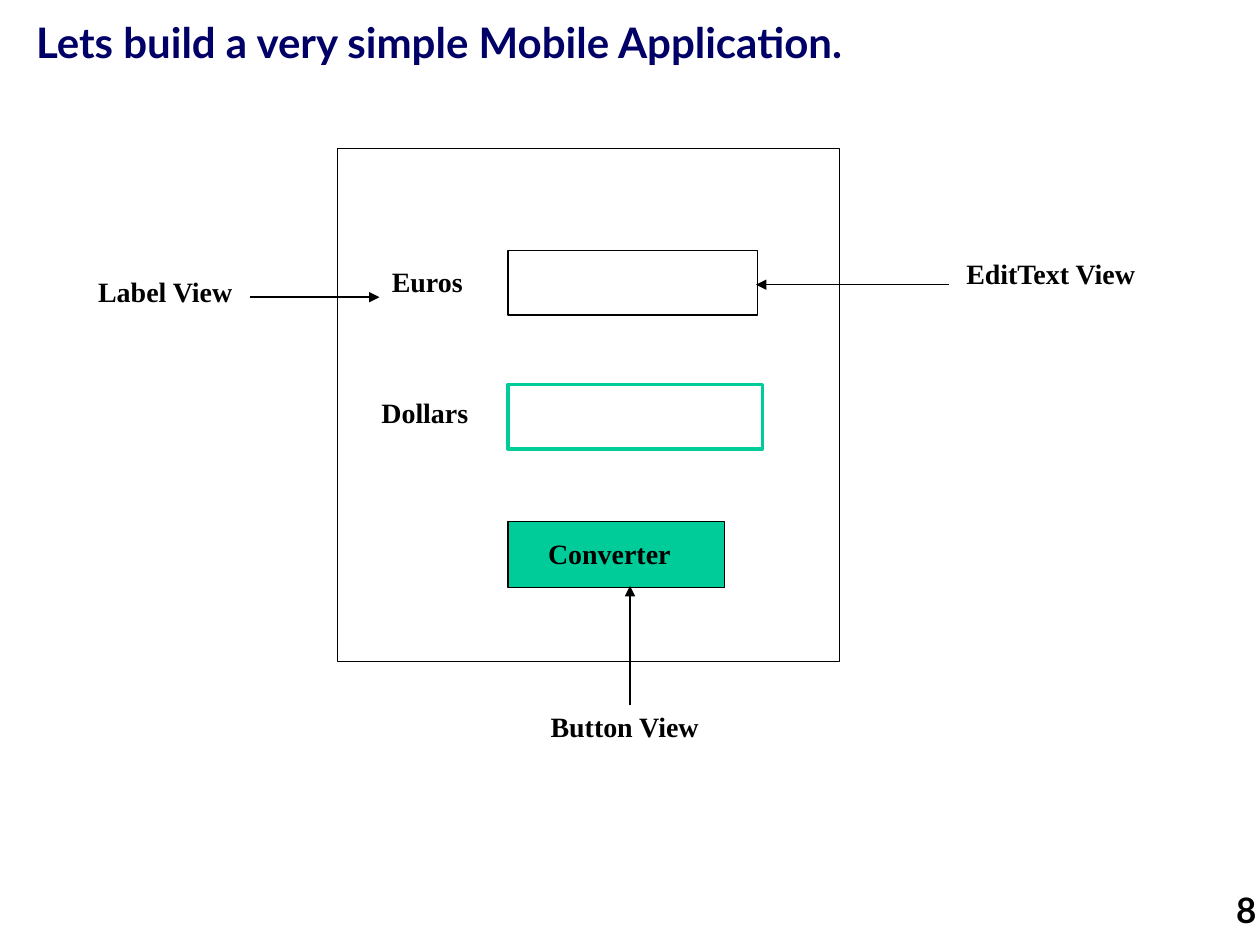
import pptx
import pptx.util
import pptx.dml.color
import pptx.enum.shapes
import pptx.enum.text
import pptx.oxml
import pptx.oxml.ns

Cm = pptx.util.Cm
Pt = pptx.util.Pt
RGBColor = pptx.dml.color.RGBColor
ALIGN = pptx.enum.text.PP_ALIGN

BLACK = RGBColor(0x00, 0x00, 0x00)
WHITE = RGBColor(0xFF, 0xFF, 0xFF)
NAVY = RGBColor(0x00, 0x00, 0x66)
GREEN = RGBColor(0x00, 0xCC, 0x99)

deck = pptx.Presentation()
deck.slide_width = Cm(25.4)
deck.slide_height = Cm(19.05)
page = deck.slides.add_slide(deck.slide_layouts[6])


def add_text(text, left, top, width, height, font="Times New Roman", size=16,
             color=BLACK, align=ALIGN.LEFT, wrap=False):
    box = page.shapes.add_textbox(Cm(left), Cm(top), Cm(width), Cm(height))
    box.text_frame.word_wrap = wrap
    para = box.text_frame.paragraphs[0]
    para.alignment = align
    span = para.add_run()
    span.text = text
    span.font.name = font
    span.font.size = Pt(size)
    span.font.bold = True
    span.font.color.rgb = color


add_text("8", 17.53, 17.78, 8.05, 1.27, font="Lato", size=20,
         align=ALIGN.RIGHT, wrap=True)
add_text("Lets build a very simple Mobile Application.", 0.48, 0.2, 24.66, 2.54,
         font="Lato", size=24, color=NAVY, wrap=True)

field_left = 10.24
rectangles = [
    (6.8, 3, 10.12, 10.33, None, BLACK, 0.75),
    (field_left, 5.05, 5.03, 1.3, None, BLACK, 0.75),
    (field_left, 7.75, 5.13, 1.3, WHITE, GREEN, 2),
    (field_left, 10.52, 4.37, 1.32, GREEN, BLACK, 0.75),
]
for left, top, width, height, fill, line, weight in rectangles:
    box = page.shapes.add_shape(pptx.enum.shapes.MSO_SHAPE.RECTANGLE,
                                Cm(left), Cm(top), Cm(width), Cm(height))
    box.shadow.inherit = False
    if fill is None:
        box.fill.background()
    else:
        box.fill.solid()
        box.fill.fore_color.rgb = fill
    box.line.color.rgb = line
    box.line.width = Pt(weight)

labels = [
    ("Euros", 7.65, 5.21, 1.96),
    ("Dollars", 7.44, 7.85, 2.29),
    ("Converter", 10.8, 10.69, 3),
    ("EditText View", 19.23, 5.05, 3.96),
    ("Label View", 1.73, 5.41, 3.25),
    ("Button View", 10.85, 14.17, 3.53),
]
for text, left, top, width in labels:
    add_text(text, left, top, width, 0.94)

arrows = [
    (5.03, 5.99, 7.65, 5.99),
    (19.13, 5.74, 15.24, 5.74),
    (12.7, 14.22, 12.7, 11.81),
]
for start_x, start_y, end_x, end_y in arrows:
    arrow = page.shapes.add_connector(pptx.enum.shapes.MSO_CONNECTOR.STRAIGHT,
                                      Cm(start_x), Cm(start_y), Cm(end_x), Cm(end_y))
    arrow.line.color.rgb = BLACK
    arrow.line.width = Pt(0.75)
    head = pptx.oxml.parse_xml(
        f'<a:tailEnd {pptx.oxml.ns.nsdecls("a")} type="triangle"/>')
    arrow.line._get_or_add_ln().append(head)
    arrow._element.spPr.append(
        pptx.oxml.parse_xml(f'<a:effectLst {pptx.oxml.ns.nsdecls("a")}/>'))

deck.save("out.pptx")
